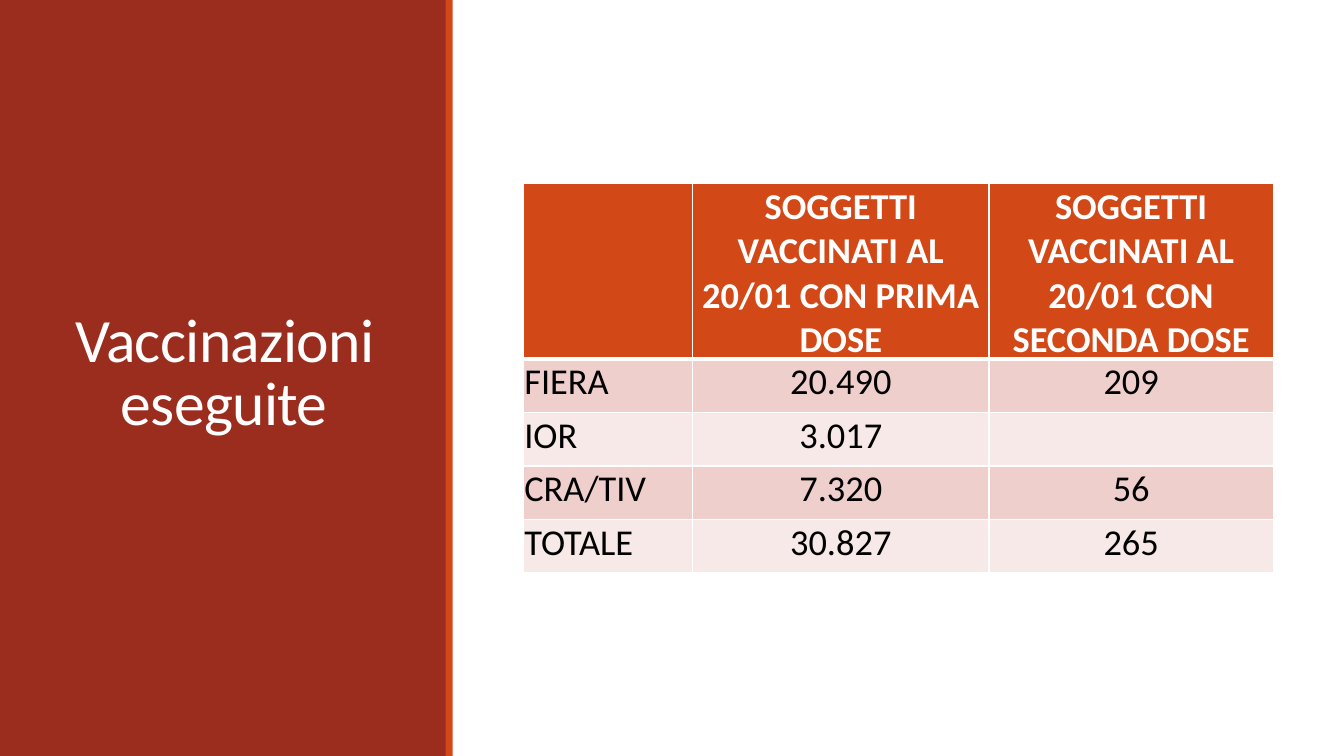
from lxml.etree import SubElement
from pptx import Presentation
from pptx.dml.color import RGBColor
from pptx.enum.shapes import MSO_SHAPE
from pptx.enum.text import MSO_ANCHOR, PP_ALIGN
from pptx.oxml.ns import qn
from pptx.util import Inches, Pt

COLORS = {
    "panel": "9B2D1F",
    "accent": "D34817",
    "band_dark": "EFCFCC",
    "band_light": "F7E9E8",
    "white": "FFFFFF",
    "black": "000000",
}
FONT = "Calibri"
ROWS = [
    ["", "SOGGETTI VACCINATI AL 20/01 CON PRIMA DOSE",
     "SOGGETTI VACCINATI AL 20/01 CON SECONDA DOSE"],
    ["FIERA", "20.490", "209"],
    ["IOR", "3.017", ""],
    ["CRA/TIV", "7.320", "56"],
    ["TOTALE", "30.827", "265"],
]
COLUMN_WIDTHS = [1.68, 2.94, 2.82]
HEADER_HEIGHT, ROW_HEIGHT = 1.38, 0.53


def rgb(name):
    return RGBColor.from_string(COLORS[name])


def format_font(font, size, color, bold=False):
    font.name = FONT
    font.size = Pt(size)
    font.bold = bold
    font.color.rgb = rgb(color)


def add_bar(slide, left, top, width, height, color):
    bar = slide.shapes.add_shape(MSO_SHAPE.RECTANGLE, Inches(left), Inches(top),
                                 Inches(width), Inches(height))
    bar.shadow.inherit = False
    bar.fill.solid()
    bar.fill.fore_color.rgb = rgb(color)
    bar.line.fill.background()


def add_title_panel(slide, left, top, width, height):
    """Coloured side panel with an accent edge and a centred title."""
    add_bar(slide, left, top, width, height, "panel")
    title = slide.shapes.add_textbox(Inches(left + 0.54), Inches(top + 0.57),
                                     Inches(width - 1.06), Inches(height - 1.19))
    frame = title.text_frame
    frame.word_wrap = True
    frame.vertical_anchor = MSO_ANCHOR.MIDDLE
    frame.text = "Vaccinazioni eseguite"
    paragraph = frame.paragraphs[0]
    paragraph.alignment = PP_ALIGN.CENTER
    paragraph.line_spacing = 0.85
    run = paragraph.runs[0]
    format_font(run.font, 44, "white")
    run._r.get_or_add_rPr().set("spc", "-50")
    add_bar(slide, left + width - 0.01, top, 0.07, height, "accent")


def set_borders(cell, widths):
    """Draw white borders; widths maps each side (L, R, T, B) to points."""
    properties = cell._tc.get_or_add_tcPr()
    for position, (side, width) in enumerate(widths.items()):
        line = SubElement(properties, qn(f"a:ln{side}"), w=str(Pt(width)))
        fill = SubElement(line, qn("a:solidFill"))
        SubElement(fill, qn("a:srgbClr"), val=COLORS["white"])
        properties.insert(position, line)


def format_cell(cell, text, row, column):
    header = row == 0
    cell.fill.solid()
    band = "band_dark" if row % 2 else "band_light"
    cell.fill.fore_color.rgb = rgb("accent" if header else band)
    set_borders(cell, {"L": 1, "R": 1, "T": 3 if row == 1 else 1, "B": 3 if header else 1})
    if not text:
        return
    cell.margin_left = cell.margin_right = cell.margin_top = Inches(0.01)
    cell.margin_bottom = 0
    cell.vertical_anchor = MSO_ANCHOR.BOTTOM if header else MSO_ANCHOR.TOP
    cell.text_frame.text = text
    paragraph = cell.text_frame.paragraphs[0]
    paragraph.alignment = PP_ALIGN.CENTER if column else PP_ALIGN.LEFT
    format_font(paragraph.runs[0].font, 26, "white" if header else "black", header)


def add_doses_table(slide, left, top, width, height):
    graphic_frame = slide.shapes.add_table(len(ROWS), len(COLUMN_WIDTHS), Inches(left),
                                           Inches(top), Inches(width), Inches(height))
    table = graphic_frame.table
    for column, column_width in zip(table.columns, COLUMN_WIDTHS):
        column.width = Inches(column_width)
    for row_index, texts in enumerate(ROWS):
        table.rows[row_index].height = Inches(ROW_HEIGHT if row_index else HEADER_HEIGHT)
        for column_index, text in enumerate(texts):
            format_cell(table.cell(row_index, column_index), text, row_index, column_index)
    graphic_frame.height = Inches(height)


def main():
    presentation = Presentation()
    presentation.slide_width = Inches(13.33)
    presentation.slide_height = Inches(7.5)
    slide = presentation.slides.add_slide(presentation.slide_layouts[6])
    add_title_panel(slide, 0, 0, 4.43, 7.5)
    add_doses_table(slide, 5.19, 1.82, sum(COLUMN_WIDTHS), 3.86)
    presentation.save("out.pptx")


if __name__ == "__main__":
    main()
